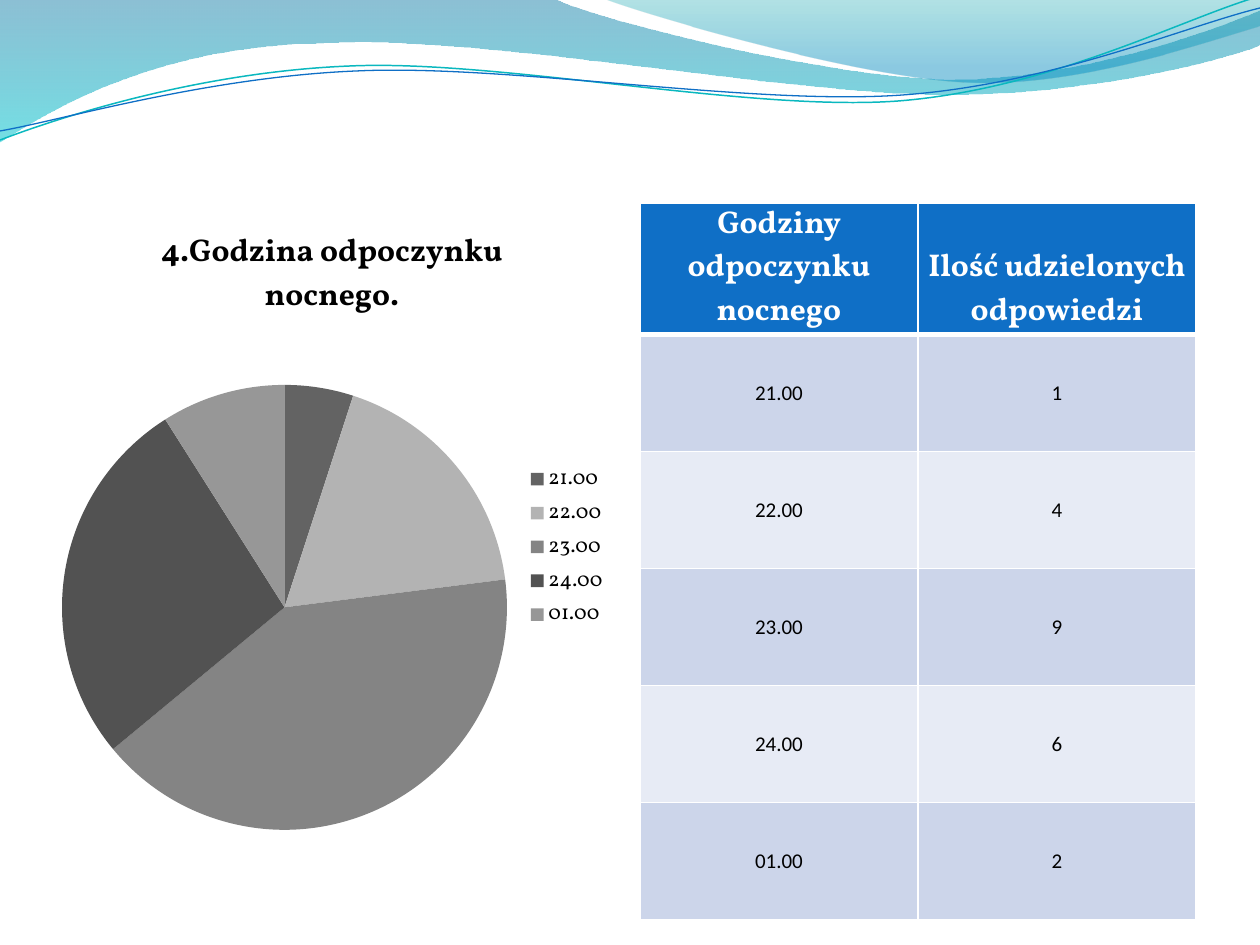
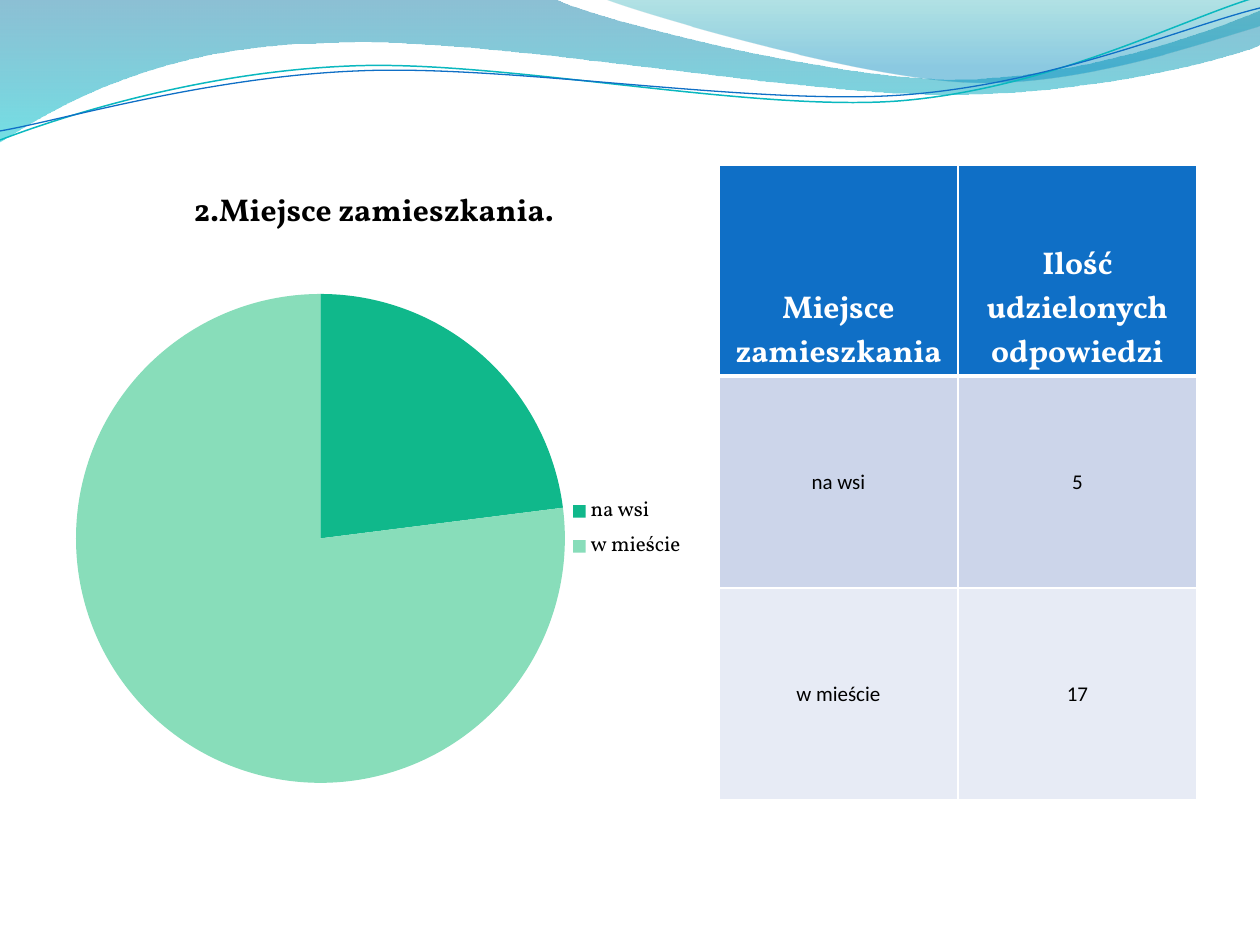
"""Build two survey slides, each with a pie chart, an answer table and a wave header."""
from lxml import etree
from pptx import Presentation
from pptx.chart.data import CategoryChartData
from pptx.dml.color import RGBColor
from pptx.enum.chart import XL_CHART_TYPE, XL_LEGEND_POSITION
from pptx.enum.text import MSO_ANCHOR, PP_ALIGN
from pptx.oxml.ns import qn
from pptx.util import Emu, Pt

PIE = XL_CHART_TYPE.PIE
LEGEND_RIGHT = XL_LEGEND_POSITION.RIGHT
CENTER = PP_ALIGN.CENTER
BOTTOM, MIDDLE = MSO_ANCHOR.BOTTOM, MSO_ANCHOR.MIDDLE

PX = 914400 // 126
HEAD_FONT, BODY_FONT = "Vollkorn", "Calibri"
WHITE, BLACK, BLUE, TEAL = "FFFFFF", "000000", "0F6FC6", "0AB8BF"
ROW_FILLS = ("CCD5EA", "E7EBF5")

WAVE_BANDS = [
    {"start": (0, 0),
     "steps": [(554, -1), (600, 21, 837, 79, 955, 79), (1075, 79, 1207, 33, 1260, 11),
               (1261, 45), (1239, 55, 1096, 96, 940, 94), (784, 94, 481, 35, 324, 43),
               (163, 45, 58, 105, -1, 142), (0, 0)],
     "stops": [(0, "0074A1", 45), (1, "00C6CF", 55)]},
    {"start": (604, -1),
     "steps": [(641, 14, 859, 78, 969, 82), (1079, 87, 1211, 40, 1260, 26), (1260, 0),
               (604, -1)],
     "stops": [(0, "00A1A9", 30), (0.8, "008BBF", 45)]},
]
WAVE_LINES = [
    {"start": (0, 140), "color": TEAL, "width": 0.85,
     "steps": [(60, 117, 199, 72, 349, 66), (498, 59, 747, 112, 898, 101),
               (1050, 89, 1182, 19, 1257, -3)]},
    {"start": (0, 131), "color": BLUE, "width": 0.75,
     "steps": [(59, 121, 207, 77, 357, 71), (508, 64, 752, 106, 903, 95),
               (1053, 84, 1186, 26, 1260, 8)]},
]

SLIDES = [
    {"title": "4.Godzina odpoczynku nocnego.",
     "headers": ("Godziny odpoczynku nocnego", "Ilość udzielonych odpowiedzi"),
     "answers": [("21.00", 1, 5, "636363"), ("22.00", 4, 18, "B3B3B3"),
                 ("23.00", 9, 41, "848484"), ("24.00", 6, 27, "525252"),
                 ("01.00", 2, 9, "979797")],
     "chart": (44, 201, 576, 692), "plot": (62, 385, 445, 445), "legend": None,
     "chart_size": 18,
     "table": (640, 203), "column": 278, "header_row": 111, "row": 117},
    {"title": "2.Miejsce zamieszkania.",
     "headers": ("Miejsce zamieszkania", "Ilość udzielonych odpowiedzi"),
     "answers": [("na wsi", 5, 23, "10B88B"), ("w mieście", 17, 77, "88DDBA")],
     "chart": (54, 162, 640, 677), "plot": (76, 263, 489, 551),
     "legend": (567, 491, 120, 76), "chart_size": 10,
     "table": (719, 165), "column": 239, "header_row": 211, "row": 212},
]


def color(value):
    return RGBColor.from_string(value)


def px(*values):
    return [Emu(value * PX) for value in values]


def style_font(font, size, name, value=BLACK, bold=False):
    font.size, font.name, font.bold = Pt(size), name, bold
    font.color.rgb = color(value)


def add_outline(page, wave, close):
    builder = page.shapes.build_freeform(*wave["start"], scale=PX)
    builder.add_line_segments([step[-2:] for step in wave["steps"]], close=close)
    shape = builder.convert_to_shape()
    shape.shadow.inherit = False
    left, top = shape.left // PX, shape.top // PX
    segments = list(shape._element.iter(qn("a:lnTo")))
    for segment, step in zip(segments, wave["steps"]):
        if len(step) == 2:
            continue
        curve = etree.Element(qn("a:cubicBezTo"))
        for x, y in zip(step[::2], step[1::2]):
            etree.SubElement(curve, qn("a:pt"), x=str(x - left), y=str(y - top))
        segment.getparent().replace(segment, curve)
    return shape


def add_waves(page):
    for band in WAVE_BANDS:
        shape = add_outline(page, band, True)
        shape.line.fill.background()
        shape.fill.gradient()
        shape.fill.gradient_angle = 270
        for stop, (position, value, _) in zip(shape.fill.gradient_stops, band["stops"]):
            stop.position = position
            stop.color.rgb = color(value)
        for node, (_, _, opacity) in zip(shape._element.iter(qn("a:srgbClr")), band["stops"]):
            etree.SubElement(node, qn("a:alpha")).set("val", str(opacity * 1000))
    for wave in WAVE_LINES:
        shape = add_outline(page, wave, False)
        shape.fill.background()
        shape.line.color.rgb = color(wave["color"])
        shape.line.width = Pt(wave["width"])


def set_borders(cell, bottom):
    properties = cell._tc.get_or_add_tcPr()
    widths = {"lnL": 1, "lnR": 1, "lnT": 1, "lnB": bottom}
    for index, (tag, width) in enumerate(widths.items()):
        line = etree.Element(qn(f"a:{tag}"), w=str(Pt(width)))
        fill = etree.SubElement(line, qn("a:solidFill"))
        etree.SubElement(fill, qn("a:srgbClr")).set("val", WHITE)
        properties.insert(index, line)


def add_answer_table(page, content):
    rows = [content["headers"]] + [answer[:2] for answer in content["answers"]]
    heights = [content["header_row"]] + [content["row"]] * len(content["answers"])
    frame = page.shapes.add_table(
        len(rows), 2, *px(*content["table"], 2 * content["column"], sum(heights)))
    table = frame.table
    for index, (values, height) in enumerate(zip(rows, heights)):
        table.rows[index].height = Emu(height * PX)
        is_header = index == 0
        for cell, value in zip(table.rows[index].cells, values):
            cell.margin_left = cell.margin_right = cell.margin_top = cell.margin_bottom = 0
            cell.vertical_anchor = BOTTOM if is_header else MIDDLE
            cell.fill.solid()
            cell.fill.fore_color.rgb = color(BLUE if is_header else ROW_FILLS[(index - 1) % 2])
            set_borders(cell, 3 if is_header else 1)
            cell.text_frame.text = str(value)
            para = cell.text_frame.paragraphs[0]
            para.alignment = CENTER
            if is_header:
                style_font(para.runs[0].font, 18, HEAD_FONT, WHITE, True)
            else:
                style_font(para.runs[0].font, 12, BODY_FONT)


def place_part(part, position, area, box, target=None):
    left, top, width, height = area
    for old in part.findall(qn("c:layout")):
        part.remove(old)
    layout = etree.Element(qn("c:layout"))
    part.insert(position, layout)
    manual = etree.SubElement(layout, qn("c:manualLayout"))
    settings = {"layoutTarget": target} if target else {}
    settings.update(xMode="edge", yMode="edge",
                    x=(box[0] - left) / width, y=(box[1] - top) / height,
                    w=box[2] / width, h=box[3] / height)
    for tag, value in settings.items():
        etree.SubElement(manual, qn(f"c:{tag}")).set("val", str(value))


def add_pie(page, content):
    answers, area = content["answers"], content["chart"]
    data = CategoryChartData()
    data.categories = [answer[0] for answer in answers]
    data.add_series("Series 1", [answer[2] for answer in answers])
    chart = page.shapes.add_chart(PIE, *px(*area), data).chart
    style_font(chart.font, content["chart_size"], HEAD_FONT)
    chart.has_title = True
    title = chart.chart_title.text_frame
    title.text = content["title"]
    style_font(title.paragraphs[0].runs[0].font, 18, HEAD_FONT, BLACK, True)
    chart.chart_title.include_in_layout = False
    chart.has_legend = True
    chart.legend.position = LEGEND_RIGHT
    chart.legend.include_in_layout = False
    style_font(chart.legend.font, 12, HEAD_FONT)
    pie = chart.plots[0]
    pie.vary_by_categories = True
    for index, answer in enumerate(answers):
        fill = pie.series[0].points[index].format.fill
        fill.solid()
        fill.fore_color.rgb = color(answer[3])
    space = chart._chartSpace.chart
    place_part(space.plotArea, 0, area, content["plot"], "inner")
    if content["legend"]:
        place_part(space.find(qn("c:legend")), 1, area, content["legend"])


def main():
    deck = Presentation()
    deck.slide_width, deck.slide_height = px(1260, 945)
    blank = deck.slide_layouts[6]
    for content in SLIDES:
        page = deck.slides.add_slide(blank)
        add_waves(page)
        add_answer_table(page, content)
        add_pie(page, content)
    deck.save("out.pptx")


if __name__ == "__main__":
    main()
